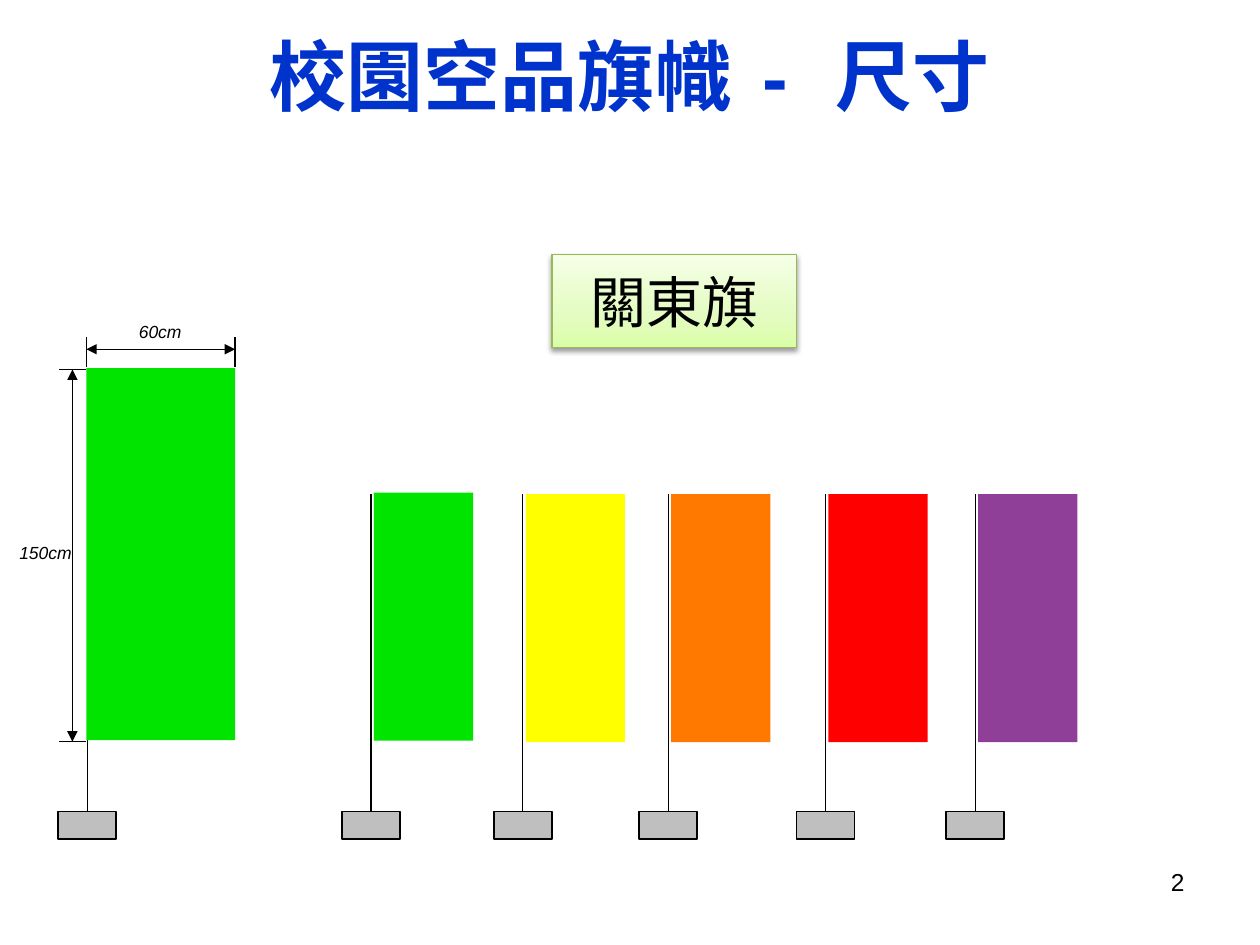
from lxml.etree import SubElement
from pptx import Presentation
from pptx.dml.color import RGBColor
from pptx.enum.shapes import MSO_CONNECTOR, MSO_SHAPE
from pptx.enum.text import MSO_ANCHOR, PP_ALIGN
from pptx.oxml import parse_xml
from pptx.oxml.ns import nsdecls, qn
from pptx.util import Cm, Pt

COLORS = {
    "black": "000000", "title": "0033CC", "base": "BFBFBF",
    "green": "00E400", "yellow": "FFFF00", "orange": "FF7800",
    "red": "FF0000", "purple": "8F3F97", "label_line": "98B955",
}
LABEL_STOPS = [(0, "DAFDA7"), (35, "E4FCC2"), (100, "F5FFE7")]
BASE_W, BASE_H, BASE_TOP = 1.17, 0.56, 16.36
POLE_TOP = 9.96
FLAGS = [
    (7.48, 9.93, "green"), (10.54, 9.96, "yellow"), (13.47, 9.96, "orange"),
    (16.64, 9.96, "red"), (19.66, 9.96, "purple"),
]


def rgb(name):
    return RGBColor.from_string(COLORS[name])


def add_rect(shapes, x, y, w, h, fill=None, line=None, width=1):
    sp = shapes.add_shape(MSO_SHAPE.RECTANGLE, Cm(x), Cm(y), Cm(w), Cm(h))
    sp.shadow.inherit = False
    if fill:
        sp.fill.solid()
        sp.fill.fore_color.rgb = rgb(fill)
    if line:
        sp.line.color.rgb = rgb(line)
        sp.line.width = Pt(width)
    else:
        sp.line.fill.background()
    return sp


def add_line(shapes, x1, y1, x2, y2, arrows=False):
    c = shapes.add_connector(MSO_CONNECTOR.STRAIGHT, Cm(x1), Cm(y1), Cm(x2), Cm(y2))
    c.line.color.rgb = rgb("black")
    c.line.width = Pt(0.75)
    if arrows:
        ln = c.line._get_or_add_ln()
        for end in ("a:headEnd", "a:tailEnd"):
            SubElement(ln, qn(end), type="triangle")
    SubElement(c._element.spPr, qn("a:effectLst"))
    return c


def format_runs(p, size, color="black", bold=False, italic=False):
    for r in p.runs:
        r.font.name = "Arial"
        r.font.size = Pt(size)
        r.font.bold = bold
        r.font.italic = italic
        r.font.color.rgb = rgb(color)


def add_text(shapes, x, y, w, h, text, size, align=PP_ALIGN.LEFT, wrap=True, italic=False):
    tf = shapes.add_textbox(Cm(x), Cm(y), Cm(w), Cm(h)).text_frame
    tf.word_wrap = wrap
    p = tf.paragraphs[0]
    p.text = text
    p.alignment = align
    format_runs(p, size, italic=italic)


def add_title(s, x, y, w, h):
    tf = s.shapes.add_textbox(Cm(x), Cm(y), Cm(w), Cm(h)).text_frame
    tf.word_wrap = True
    tf.vertical_anchor = MSO_ANCHOR.MIDDLE
    p = tf.paragraphs[0]
    p.alignment = PP_ALIGN.CENTER
    for text in ("校園空品旗幟", " - ", "尺寸"):
        p.add_run().text = text
    format_runs(p, 44, "title", bold=True)
    p.runs[1].font._element.set("spc", "740")


def add_stand(shapes, x, pole_top):
    base = add_rect(shapes, x - BASE_W / 2, BASE_TOP, BASE_W, BASE_H, "base", "black")
    pole = add_line(shapes, x, pole_top, x, BASE_TOP)
    pole.end_connect(base, 0)


def add_measured_flag(s, x, y, w, h):
    shapes = s.shapes.add_group_shape().shapes
    add_stand(shapes, x + 0.02, POLE_TOP)
    add_rect(shapes, x, y, w, h, "green")
    for edge in (x, x + w):
        add_line(shapes, edge, y - 0.63, edge, y - 0.03)
    add_line(shapes, x, y - 0.38, x + w, y - 0.38, arrows=True)
    add_text(shapes, x + 0.81, y - 1.07, 1.75, 0.69, "60cm", 10, wrap=False, italic=True)
    for edge in (y + 0.03, y + h + 0.03):
        add_line(shapes, x, edge, x - 0.56, edge)
    add_line(shapes, x - 0.28, y + 0.03, x - 0.28, y + h + 0.03, arrows=True)
    add_text(shapes, x - 1.6, y + 3.38, 1.75, 0.69, "150cm", 10, wrap=False, italic=True)


def add_flag_row(s, w, h):
    shapes = s.shapes.add_group_shape().shapes
    for x, top, color in FLAGS:
        add_stand(shapes, x, POLE_TOP)
        add_rect(shapes, x + 0.06, top, w, h, color)


def add_label(s, x, y, w, h):
    sp = add_rect(s.shapes, x, y, w, h, line="label_line", width=0.75)
    sp.fill.gradient()
    sp.fill.gradient_angle = 90
    stops = sp._element.spPr.find(qn("a:gradFill")).find(qn("a:gsLst"))
    for stop in list(stops):
        stops.remove(stop)
    for pos, color in LABEL_STOPS:
        gs = SubElement(stops, qn("a:gs"), pos=str(pos * 1000))
        SubElement(gs, qn("a:srgbClr"), val=color)
    sp._element.spPr.find(qn("a:effectLst")).append(parse_xml(
        f'<a:outerShdw {nsdecls("a")} blurRad="40000" dist="20000" dir="5400000" rotWithShape="0">'
        '<a:srgbClr val="000000"><a:alpha val="38000"/></a:srgbClr></a:outerShdw>'))
    tf = sp.text_frame
    tf.margin_left = tf.margin_right = Cm(0.5)
    tf.margin_top = tf.margin_bottom = Cm(0.25)
    p = tf.paragraphs[0]
    p.text = "關東旗"
    p.alignment = PP_ALIGN.CENTER
    format_runs(p, 32)


def main():
    prs = Presentation()
    prs.slide_width, prs.slide_height = Cm(25.4), Cm(19.05)
    s = prs.slides.add_slide(prs.slide_layouts[6])
    add_text(s.shapes, 18.2, 17.35, 5.93, 1.32, "2", 14, align=PP_ALIGN.RIGHT)
    add_measured_flag(s, 1.74, 7.42, 3, 7.5)
    add_flag_row(s, 2, 5)
    add_title(s, 1.27, -0.08, 22.86, 3.18)
    add_label(s, 11.13, 5.13, 4.93, 1.88)
    prs.save("out.pptx")


if __name__ == "__main__":
    main()
